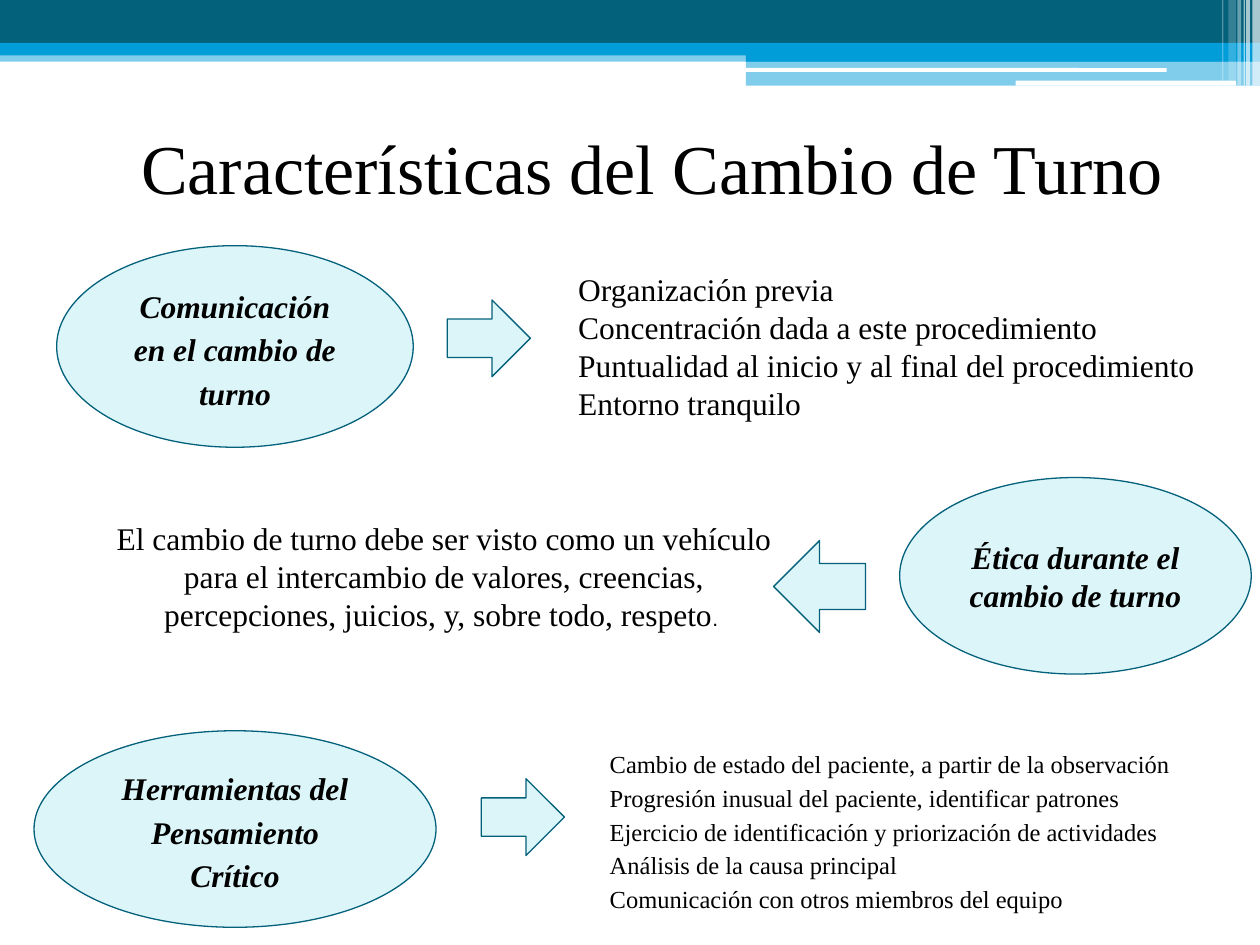
from dataclasses import dataclass

from lxml import etree
from pptx import Presentation
from pptx.dml.color import RGBColor
from pptx.enum import shapes, text
from pptx.util import Inches, Pt


@dataclass(frozen=True)
class Theme:
    teal: str = "04617B"
    blue: str = "009DD9"
    pale: str = "DBF5F9"
    white: str = "FFFFFF"
    black: str = "000000"
    serif: str = "Times New Roman"
    sans: str = "Arial"
    title: int = 40
    body: int = 18
    small: int = 14
    stop: int = 12


theme = Theme()
kinds = shapes.MSO_SHAPE
aligns = text.PP_ALIGN
anchors = text.MSO_ANCHOR

deck = Presentation()
deck.slide_width, deck.slide_height = Inches(10), Inches(7.5)
page = deck.slides.add_slide(deck.slide_layouts[6])


def add_figure(kind, place, fill, opacity=100, outline=None):
    figure = page.shapes.add_shape(kind, *map(Inches, place))
    figure.shadow.inherit = False
    figure.fill.solid()
    figure.fill.fore_color.rgb = RGBColor.from_string(fill)
    if opacity < 100:
        color = figure.fill._xPr.find(".//{*}srgbClr")
        alpha = etree.SubElement(color, color.tag.replace("srgbClr", "alpha"))
        alpha.set("val", str(opacity * 1000))
    if outline:
        figure.line.color.rgb = RGBColor.from_string(outline)
        figure.line.width = Pt(0.75)
    else:
        figure.line.fill.background()
    return figure


def write(box, paragraphs, size=theme.body, align=aligns.LEFT, anchor=anchors.MIDDLE,
          spacing=None, indent=0, bold=False, italic=False):
    """Fill a box; each paragraph is a list of (words, font, size) or a plain string."""
    frame = box.text_frame
    frame.word_wrap = True
    frame.vertical_anchor = anchor
    frame.margin_left = frame.margin_right = Inches(0.1)
    frame.margin_top = frame.margin_bottom = Inches(0.1)
    for index, content in enumerate(paragraphs):
        para = frame.add_paragraph() if index else frame.paragraphs[0]
        para.alignment = align
        if spacing:
            para.line_spacing = spacing
        if indent:
            props = para._p.get_or_add_pPr()
            props.set("marL", str(Inches(indent)))
            props.set("indent", "0")
        spans = [(content, theme.serif, size)] if isinstance(content, str) else content
        for words, font, points in spans:
            span = para.add_run()
            span.text = words
            span.font.name = font
            span.font.size = Pt(points)
            span.font.bold = bold
            span.font.italic = italic
            span.font.color.rgb = RGBColor.from_string(theme.black)


# Header bands
for place, color, opacity in [
    ((0, 0.4, 10, 0.09), theme.blue, 50),
    ((0, 0, 10, 0.34), theme.teal, 100),
    ((0, 0.34, 10, 0.1), theme.blue, 100),
    ((5.92, 0.39, 4.08, 0.1), theme.blue, 100),
    ((5.92, 0.48, 4.08, 0.2), theme.blue, 50),
]:
    add_figure(kinds.RECTANGLE, place, color, opacity)

for place in [(5.91, 0.54, 3.35, 0.03), (8.06, 0.64, 1.75, 0.04)]:
    add_figure(kinds.ROUNDED_RECTANGLE, place, theme.white)

for left, width, height, opacity in [
    (9.94, 0.06, 0.68, 65),
    (9.89, 0.03, 0.68, 65),
    (9.87, 0.01, 0.68, 60),
    (9.82, 0.03, 0.68, 40),
    (9.75, 0.06, 0.64, 20),
    (9.7, 0.01, 0.64, 30),
]:
    add_figure(kinds.RECTANGLE, (left, 0, width, height), theme.white, opacity)

# Title
title = page.shapes.add_textbox(*map(Inches, (0.81, 0.89, 8.73, 1.13)))
write(title, ["Características del Cambio de Turno"], size=theme.title,
      align=aligns.CENTER, anchor=anchors.TOP)

# Topics
for place, words, spacing in [
    ((0.45, 1.95, 2.83, 1.6), "Comunicación en el cambio de turno", 1.15),
    ((7.14, 3.79, 2.79, 1.56), "Ética durante el cambio de turno", None),
    ((0.27, 5.8, 3.19, 1.56), "Herramientas del Pensamiento Crítico", 1.15),
]:
    topic = add_figure(kinds.OVAL, place, theme.pale, outline=theme.teal)
    write(topic, [words], align=aligns.CENTER, spacing=spacing, bold=True, italic=True)

# Arrows from each topic to its details
for kind, place in [
    (kinds.RIGHT_ARROW, (3.55, 2.38, 0.66, 0.61)),
    (kinds.LEFT_ARROW, (6.14, 4.29, 0.73, 0.73)),
    (kinds.RIGHT_ARROW, (3.82, 6.18, 0.66, 0.61)),
]:
    add_figure(kind, place, theme.pale, outline=theme.teal)

# Details
communication = [
    "Organización previa",
    "Concentración dada a este procedimiento",
    "Puntualidad al inicio y al final del procedimiento",
    "Entorno tranquilo",
]
ethics = [[
    ("El cambio de turno debe ser visto como un vehículo para el intercambio de "
     "valores, creencias, percepciones, juicios, y, sobre todo, respeto",
     theme.serif, theme.body),
    (". ", theme.sans, theme.stop),
]]
thinking = [
    "Cambio de estado del paciente, a partir de la observación",
    "Progresión inusual del paciente, identificar patrones",
    "Ejercicio de identificación y priorización de actividades",
    "Análisis de la causa principal",
    "Comunicación con otros miembros del equipo",
]
for place, paragraphs, layout in [
    ((4.49, 1.89, 6.31, 1.71), communication, {}),
    ((0.67, 2.93, 5.71, 3.28), ethics, {"align": aligns.CENTER}),
    ((4.49, 5.8, 5.19, 1.56), thinking,
     {"size": theme.small, "align": aligns.JUSTIFY, "spacing": 1.15, "indent": 0.25}),
]:
    details = page.shapes.add_textbox(*map(Inches, place))
    write(details, paragraphs, **layout)

deck.save("out.pptx")
